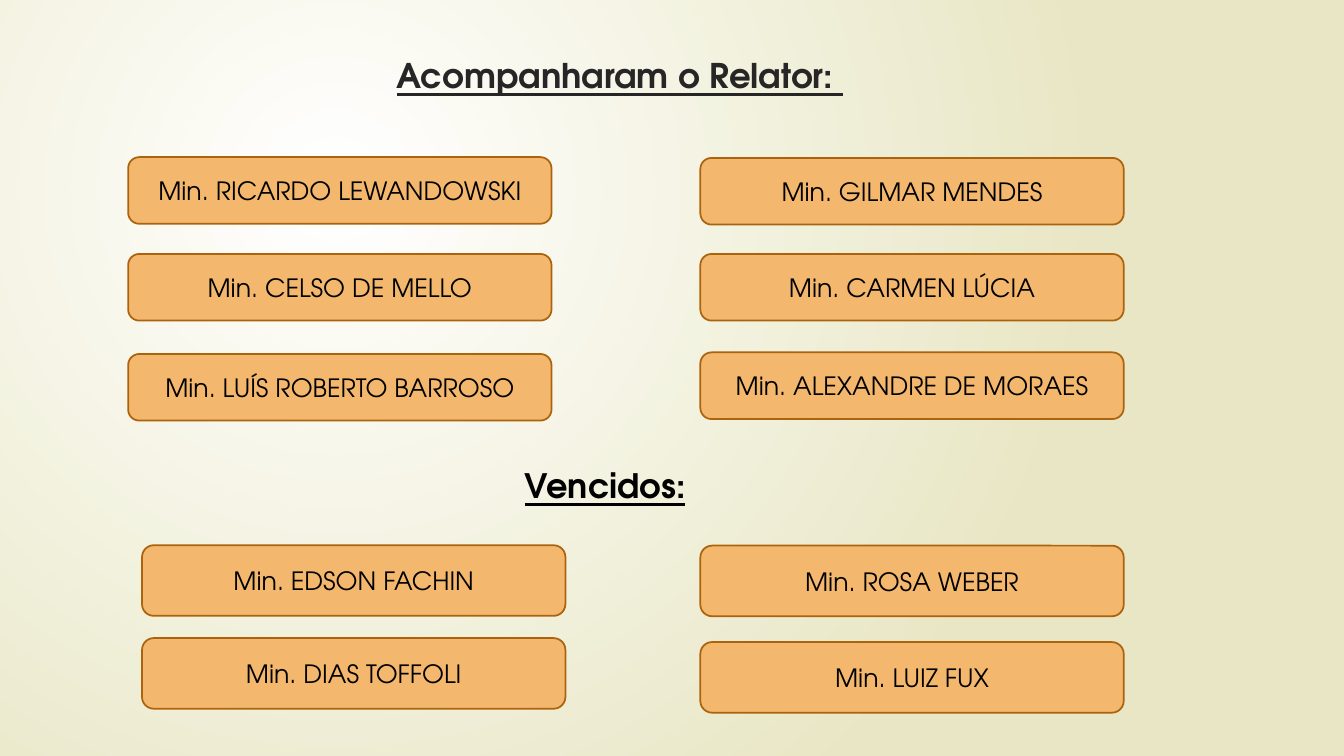
from dataclasses import dataclass

from lxml.etree import SubElement
from pptx import Presentation
from pptx.dml.color import RGBColor
from pptx.enum.shapes import MSO_SHAPE
from pptx.enum.text import MSO_ANCHOR, MSO_AUTO_SIZE, PP_ALIGN
from pptx.oxml.ns import qn
from pptx.slide import Slide
from pptx.text.text import TextFrame
from pptx.util import Cm, Pt

FONT = "TeX Gyre Adventor"
BOX_WIDTH = 10.67
RIGHT_COLUMN = 17.65


@dataclass(frozen=True)
class MinisterColumn:
    left: float
    box_height: float
    boxes: tuple[tuple[float, str], ...]  # top in cm, minister


COLUMNS = (
    # Followed the rapporteur
    MinisterColumn(3.23, 1.68, (
        (3.96, "RICARDO LEWANDOWSKI"),
        (6.4, "CELSO DE MELLO"),
        (8.92, "LUÍS ROBERTO BARROSO"),
    )),
    MinisterColumn(RIGHT_COLUMN, 1.68, (
        (3.98, "GILMAR MENDES"),
        (6.4, "CARMEN LÚCIA"),
        (8.88, "ALEXANDRE DE MORAES"),
    )),
    # Outvoted
    MinisterColumn(3.58, 1.78, (
        (13.74, "EDSON FACHIN"),
        (16.08, "DIAS TOFFOLI"),
    )),
    MinisterColumn(RIGHT_COLUMN, 1.78, (
        (13.75, "ROSA WEBER"),
        (16.18, "LUIZ FUX"),
    )),
)


def color(value: str) -> RGBColor:
    return RGBColor.from_string(value)


def write(frame: TextFrame, text: str, size: float, font_color: str,
          alignment: PP_ALIGN, heading: bool = False) -> None:
    frame.text = text
    frame.word_wrap = True
    paragraph = frame.paragraphs[0]
    paragraph.alignment = alignment
    font = paragraph.runs[0].font
    font.name = FONT
    font.size = Pt(size)
    font.color.rgb = color(font_color)
    font.bold = heading
    font.underline = heading


def paint_background(slide: Slide) -> None:
    fill = slide.background.fill
    fill.gradient()
    for stop, position, value in zip(fill.gradient_stops, (0, 1), ("FFFFFF", "E8E6C4")):
        stop.position = position
        stop.color.rgb = color(value)
    # Turn the linear gradient into a circular one
    gradient = slide.background.element.find(".//" + qn("a:gradFill"))
    gradient.remove(gradient.find(qn("a:lin")))
    circle = SubElement(gradient, qn("a:path"), {"path": "circle"})
    SubElement(circle, qn("a:fillToRect"),
               {"l": "50000", "t": "50000", "r": "100000", "b": "100000"})


def add_title(slide: Slide) -> None:
    title = slide.shapes.title
    title.left, title.top, title.width, title.height = Cm(3.23), Cm(1.24), Cm(24.77), Cm(3.56)
    frame = title.text_frame
    write(frame, "Acompanharam o Relator: ", 24.3, "262626", PP_ALIGN.CENTER, heading=True)
    frame.vertical_anchor = MSO_ANCHOR.TOP
    frame.auto_size = MSO_AUTO_SIZE.NONE


def add_outvoted_heading(slide: Slide) -> None:
    heading = slide.shapes.add_textbox(Cm(12.98), Cm(11.58), Cm(14.45), Cm(1.28))
    write(heading.text_frame, "Vencidos:", 24, "000000", PP_ALIGN.LEFT, heading=True)


def add_column(slide: Slide, column: MinisterColumn) -> None:
    for top, minister in column.boxes:
        box = slide.shapes.add_shape(
            MSO_SHAPE.ROUNDED_RECTANGLE,
            Cm(column.left), Cm(top), Cm(BOX_WIDTH), Cm(column.box_height))
        box.shadow.inherit = False
        box.fill.solid()
        box.fill.fore_color.rgb = color("F4B76E")
        box.line.color.rgb = color("AB640D")
        box.line.width = Pt(1.25)
        write(box.text_frame, f"Min. {minister}", 18, "000000", PP_ALIGN.CENTER)
        box.text_frame.vertical_anchor = MSO_ANCHOR.MIDDLE


def main() -> None:
    presentation = Presentation()
    presentation.slide_width = Cm(33.87)
    presentation.slide_height = Cm(19.05)
    slide = presentation.slides.add_slide(presentation.slide_layouts.get_by_name("Title Only"))

    paint_background(slide)
    add_title(slide)
    add_outvoted_heading(slide)
    for column in COLUMNS:
        add_column(slide, column)

    presentation.save("out.pptx")


if __name__ == "__main__":
    main()
